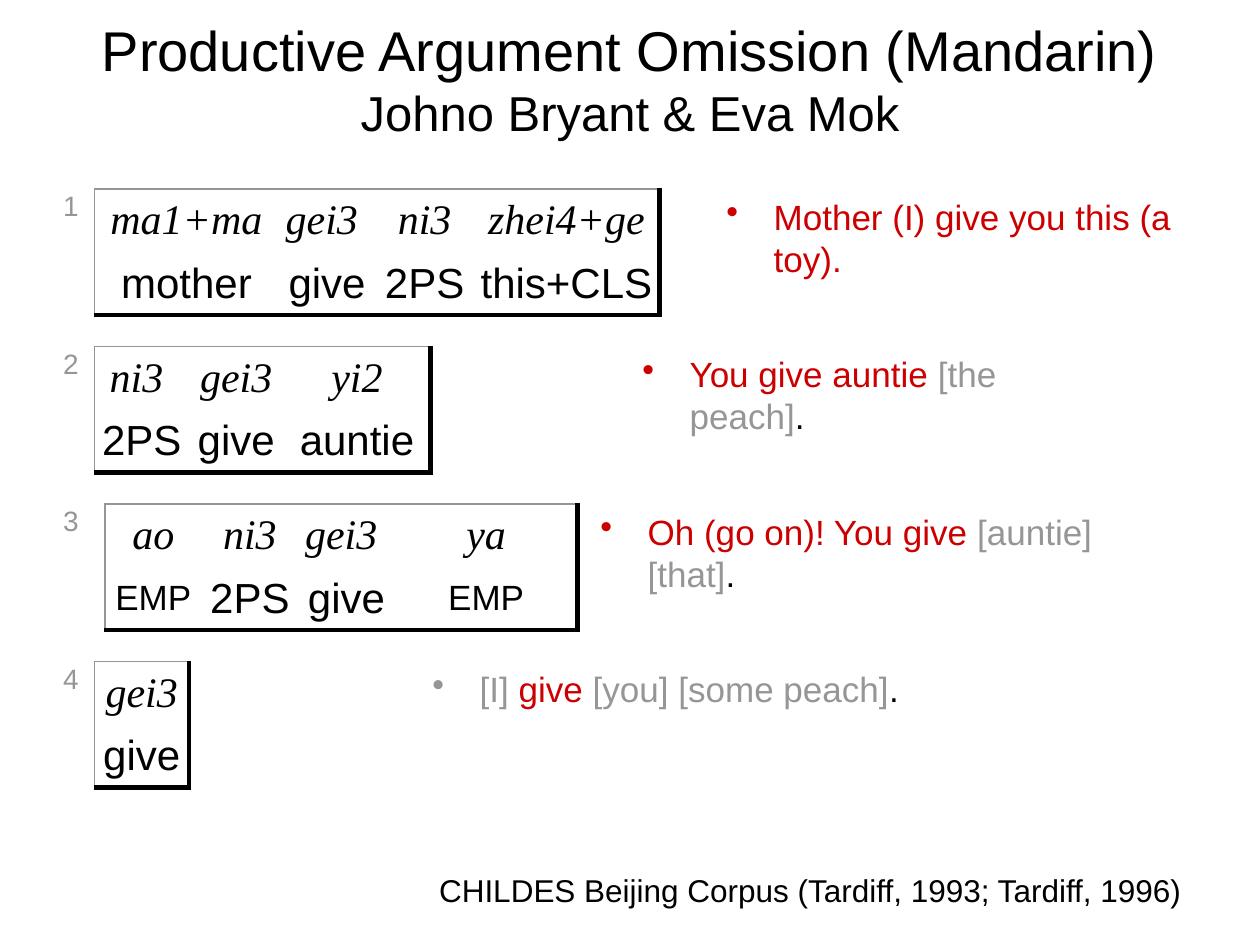
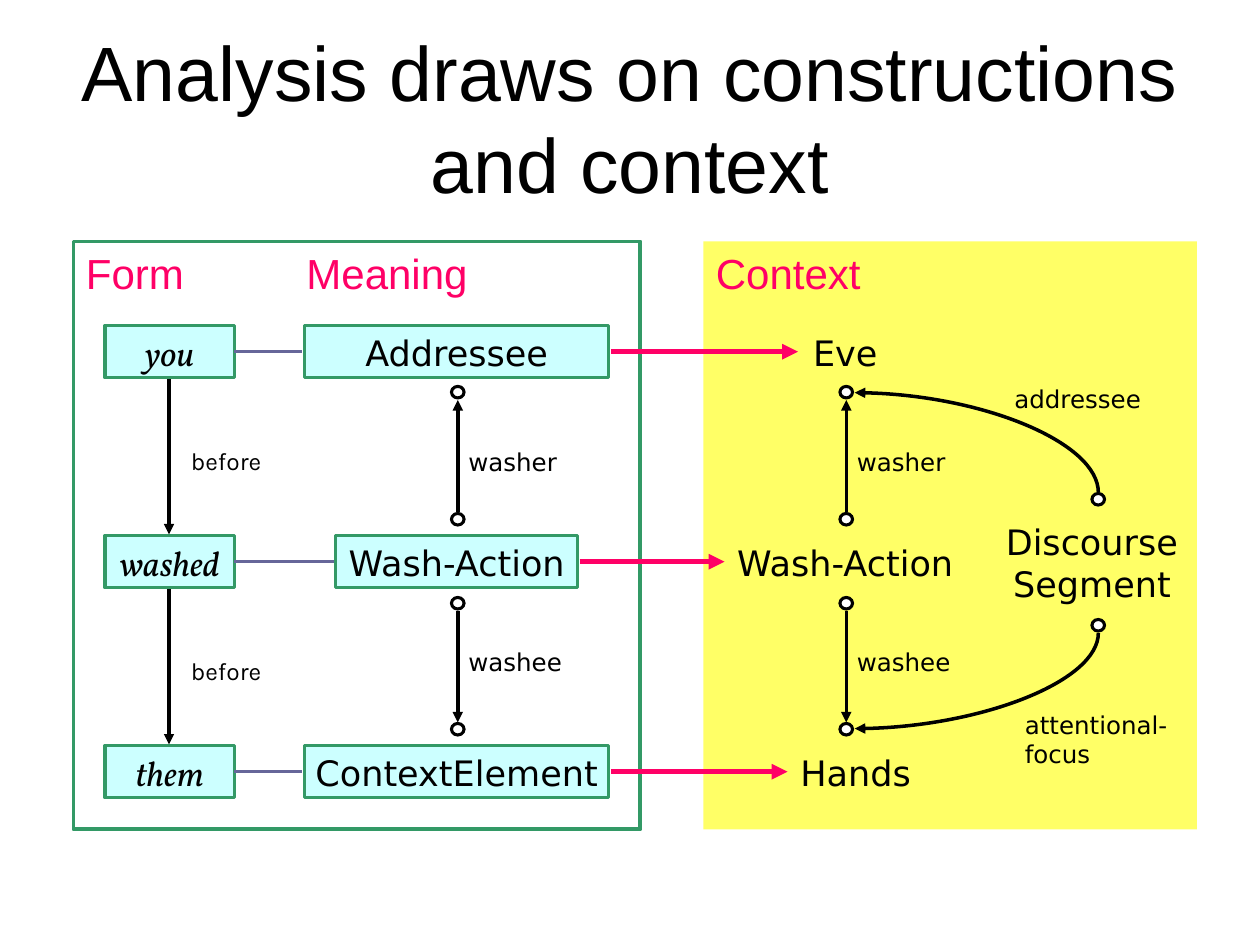
from dataclasses import dataclass
from typing import NamedTuple, Sequence

from lxml.etree import SubElement
from pptx import Presentation
from pptx.dml.color import RGBColor
from pptx.enum.shapes import MSO_CONNECTOR as Link, MSO_SHAPE as Preset
from pptx.enum.text import MSO_ANCHOR as Anchor, PP_ALIGN as Align
from pptx.oxml.ns import qn
from pptx.util import Pt

EMU_PER_PX = 7620


@dataclass(frozen=True)
class Theme:
    black: str = "000000"
    white: str = "FFFFFF"
    gray: str = "969696"
    red: str = "CC0000"
    pink: str = "FF0066"
    green: str = "339966"
    violet: str = "666699"
    aqua: str = "CCFFFF"
    yellow: str = "FFFF66"
    sans: str = "Arial"
    serif: str = "Times New Roman"
    diagram: str = "DejaVu Sans"
    spoken: str = "Vollkorn"
    order: str = "Karla"
    title: int = 44
    compact_title: int = 32
    subtitle: int = 28
    heading: int = 24
    body: int = 20
    footer: int = 18
    index: int = 16
    label: int = 14


THEME = Theme()


class Area(NamedTuple):
    left: int
    top: int
    width: int
    height: int

    @property
    def right(self) -> int:
        return self.left + self.width

    @property
    def middle(self) -> int:
        return self.top + self.height // 2


class Span(NamedTuple):
    text: str
    color: str | None = None
    size: int | None = None
    new_line: bool = False


class Example(NamedTuple):
    left: int
    columns: tuple[int, ...]
    words: tuple[str, ...]
    glosses: tuple[str, ...]
    meaning_left: int
    meaning_width: int
    meaning: tuple[Span, ...]


class Construction(NamedTuple):
    word: str
    meaning: str
    meaning_left: int
    meaning_width: int
    entity: str
    entity_left: int
    entity_width: int


class Role(NamedTuple):
    name: str
    start: int
    end: int
    label_top: int


def px(value: int) -> int:
    return value * EMU_PER_PX


def rgb(color: str) -> RGBColor:
    return RGBColor.from_string(color)


def write(frame, text: str | Sequence[Span], *, size=THEME.body, font=THEME.diagram,
          color=THEME.black, italic=False, align=Align.LEFT, anchor=Anchor.TOP,
          inset=(12, 6), before=0, spacing=None, bullet=False) -> None:
    frame.word_wrap = True
    frame.vertical_anchor = anchor
    frame.margin_left = frame.margin_right = px(inset[0])
    frame.margin_top = frame.margin_bottom = px(inset[1])
    para = frame.paragraphs[0]
    para.alignment = align
    properties = para._p.get_or_add_pPr()
    if before:
        gap = SubElement(properties, qn("a:spcBef"))
        SubElement(gap, qn("a:spcPct"), val=str(before * 1000))
    if bullet:
        properties.set("marL", str(px(45)))
        properties.set("indent", str(-px(45)))
        SubElement(properties, qn("a:buChar"), char="•")
    if spacing:
        para.line_spacing = spacing
    for span in [Span(text)] if isinstance(text, str) else text:
        if span.new_line:
            para.add_line_break()
        run = para.add_run()
        run.text = span.text
        run.font.name = font
        run.font.size = Pt(span.size or size)
        run.font.italic = italic
        run.font.color.rgb = rgb(span.color or color)


def add_text(page, area: Area, text: str | Sequence[Span], **style) -> None:
    box = page.shapes.add_textbox(*map(px, area))
    write(box.text_frame, text, **style)


def add_title(page, area: Area, text: str | Sequence[Span], size: int) -> None:
    add_text(page, area, text, size=size, font=THEME.sans, align=Align.CENTER,
             anchor=Anchor.MIDDLE)


def add_block(page, area: Area, fill: str | None = None, line: str | None = None,
              weight: float = 1.75, preset=Preset.RECTANGLE):
    block = page.shapes.add_shape(preset, *map(px, area))
    block.shadow.inherit = False
    if fill:
        block.fill.solid()
        block.fill.fore_color.rgb = rgb(fill)
    else:
        block.fill.background()
    if line:
        block.line.color.rgb = rgb(line)
        block.line.width = Pt(weight)
    else:
        block.line.fill.background()
    return block


def add_line(page, start: tuple[int, int], end: tuple[int, int], color=THEME.black,
             weight=2.0, arrow: str | None = "tailEnd", curved=False) -> None:
    kind = Link.CURVE if curved else Link.STRAIGHT
    line = page.shapes.add_connector(kind, *map(px, (*start, *end)))
    line.line.color.rgb = rgb(color)
    line.line.width = Pt(weight)
    properties = line._element.spPr
    if curved:
        properties.find(qn("a:prstGeom")).set("prst", "curvedConnector2")
    if arrow:
        SubElement(line.line._get_or_add_ln(), qn(f"a:{arrow}"), type="triangle")
    SubElement(properties, qn("a:effectLst"))


def set_border(cell, side: str, color: str | None, weight: int) -> None:
    edge = SubElement(cell._tc.get_or_add_tcPr(), qn(f"a:{side}"), w=str(Pt(weight)))
    if color:
        SubElement(SubElement(edge, qn("a:solidFill")), qn("a:srgbClr"), val=color)
    else:
        SubElement(edge, qn("a:noFill"))


def add_gloss_table(page, top: int, example: Example) -> None:
    area = Area(example.left, top, sum(example.columns), 120)
    table = page.shapes.add_table(2, len(example.columns), *map(px, area)).table
    table.first_row = table.horz_banding = False
    last = len(example.columns) - 1
    for column, width in enumerate(example.columns):
        table.columns[column].width = px(width)
        for row, text in enumerate((example.words[column], example.glosses[column])):
            cell = table.cell(row, column)
            write(cell.text_frame, text, align=Align.CENTER, before=20,
                  size=THEME.body if text == "EMP" else THEME.heading,
                  font=THEME.sans if row else THEME.serif, italic=row == 0)
            cell.vertical_anchor = Anchor.MIDDLE
            cell.margin_left = cell.margin_right = px(6)
            cell.margin_top = cell.margin_bottom = px(6)
            set_border(cell, "lnL", THEME.gray if column == 0 else None, 1)
            set_border(cell, "lnR", THEME.black if column == last else None, 3)
            set_border(cell, "lnT", THEME.gray if row == 0 else None, 1)
            set_border(cell, "lnB", THEME.black if row == 1 else None, 3)
            cell.fill.background()


EXAMPLES = (
    Example(90, (175, 93, 93, 177), ("ma1+ma", "gei3 ", "ni3", "zhei4+ge"),
            ("mother", "give", "2PS", "this+CLS"), 680, 520,
            (Span("Mother (I) give you this (a toy).", THEME.red),)),
    Example(90, (90, 90, 140), ("ni3 ", "gei3 ", "yi2"), ("2PS", "give", "auntie"),
            600, 470, (Span("You give auntie ", THEME.red),
                       Span("[the peach]", THEME.gray), Span("."))),
    Example(100, (92, 92, 92, 174), ("ao", "ni3", "gei3 ", "ya"),
            ("EMP", "2PS", "give", "EMP"), 560, 560,
            (Span("Oh (go on)! You give ", THEME.red),
             Span("[auntie] [that]", THEME.gray), Span("."))),
    Example(90, (90,), ("gei3 ",), ("give",), 400, 560,
            (Span("[I] ", THEME.gray), Span("give ", THEME.red),
             Span("[you] [some peach]", THEME.gray), Span("."))),
)

CONSTRUCTIONS = (
    Construction("you", "Addressee", 290, 290, "Eve", 760, 90),
    Construction("washed", "Wash-Action", 320, 230, "Wash-Action", 690, 230),
    Construction("them", "ContextElement", 290, 290, "Hands", 750, 130),
)

ROLES = (Role("washer", 495, 374, 420), Role("washee", 575, 695, 610))


def build_omission(page) -> None:
    add_title(page, Area(0, 0, 1200, 150),
              (Span("Productive Argument Omission (Mandarin)"),
               Span("Johno Bryant & Eva Mok", size=THEME.subtitle, new_line=True)),
              THEME.compact_title)
    for index, example in enumerate(EXAMPLES):
        top = 180 + 150 * index
        add_text(page, Area(60, top, 30, 32), str(index + 1), size=THEME.index,
                 font=THEME.sans, color=THEME.gray, inset=(0, 0), before=50)
        add_gloss_table(page, top, example)
        add_text(page, Area(example.meaning_left, top, example.meaning_width, 70),
                 example.meaning, font=THEME.sans, before=20, bullet=True)
    add_text(page, Area(380, 820, 757, 52),
             "CHILDES Beijing Corpus (Tardiff, 1993; Tardiff, 1996)",
             size=THEME.footer, font=THEME.sans, align=Align.RIGHT, before=40, spacing=1.1)


def add_node(page, x: int, y: int) -> None:
    add_block(page, Area(x - 6, y - 6, 12, 11), THEME.white, THEME.black,
              preset=Preset.OVAL)


def add_label(page, area: Area, text: str) -> None:
    add_text(page, area, text, size=THEME.label, inset=(6, 6))


def add_role(page, axis: int, role: Role) -> None:
    step = 7 if role.end > role.start else -7
    add_line(page, (axis, role.start + step), (axis, role.end - step))
    for y in (role.start, role.end):
        add_node(page, axis, y)
    add_label(page, Area(axis + 4, role.label_top, 140, 35), role.name)


def add_construction(page, index: int, item: Construction) -> None:
    top = 310 + 200 * index
    word = Area(100, top, 123, 50)
    meaning = Area(item.meaning_left, top, item.meaning_width, 50)
    entity = Area(item.entity_left, top, item.entity_width, 50)
    centered = {"align": Align.CENTER, "inset": (6, 6)}
    for area, text, font in ((word, item.word, THEME.spoken),
                             (meaning, item.meaning, THEME.diagram)):
        block = add_block(page, area, THEME.aqua, THEME.green)
        write(block.text_frame, text, font=font, italic=font == THEME.spoken, **centered)
    add_text(page, entity, item.entity, **centered)
    add_line(page, (word.right, word.middle), (meaning.left - 2, word.middle),
             THEME.violet, 1.5, None)
    add_line(page, (meaning.right + 2, word.middle), (entity.left, word.middle),
             THEME.pink, 3)
    if index:
        add_line(page, (161, top - 149), (161, top - 1), weight=1.75)
        add_text(page, Area(170, top - 91, 100, 40), "before", size=THEME.label,
                 font=THEME.order, before=50)


def build_analysis(page) -> None:
    heading = {"size": THEME.heading, "font": THEME.sans, "color": THEME.pink, "before": 50}
    add_title(page, Area(60, 36, 1080, 150),
              "Analysis draws on constructions and context", THEME.title)
    context = add_block(page, Area(670, 230, 470, 560), THEME.yellow)
    write(context.text_frame, "Context", **heading)
    add_block(page, Area(70, 230, 540, 560), line=THEME.green, weight=2.25)
    add_text(page, Area(70, 230, 200, 60), "Form", **heading)
    add_text(page, Area(280, 230, 280, 60), "Meaning", **heading)
    for index, item in enumerate(CONSTRUCTIONS):
        add_construction(page, index, item)
    for axis in (436, 806):
        for role in ROLES:
            add_role(page, axis, role)
    add_text(page, Area(950, 490, 180, 90), "Discourse Segment", align=Align.CENTER,
             inset=(6, 6))
    for entity_y, segment_y, gap in ((374, 476, -7), (694, 596, 7)):
        add_line(page, (814, entity_y), (1046, segment_y + gap), arrow="headEnd",
                 curved=True)
        add_node(page, 1046, segment_y)
    add_label(page, Area(960, 360, 140, 35), "addressee")
    add_label(page, Area(970, 670, 150, 60), "attentional-focus")


def main() -> None:
    deck = Presentation()
    deck.slide_width, deck.slide_height = px(1200), px(900)
    for build in (build_omission, build_analysis):
        build(deck.slides.add_slide(deck.slide_layouts[6]))
    deck.save("out.pptx")


if __name__ == "__main__":
    main()
